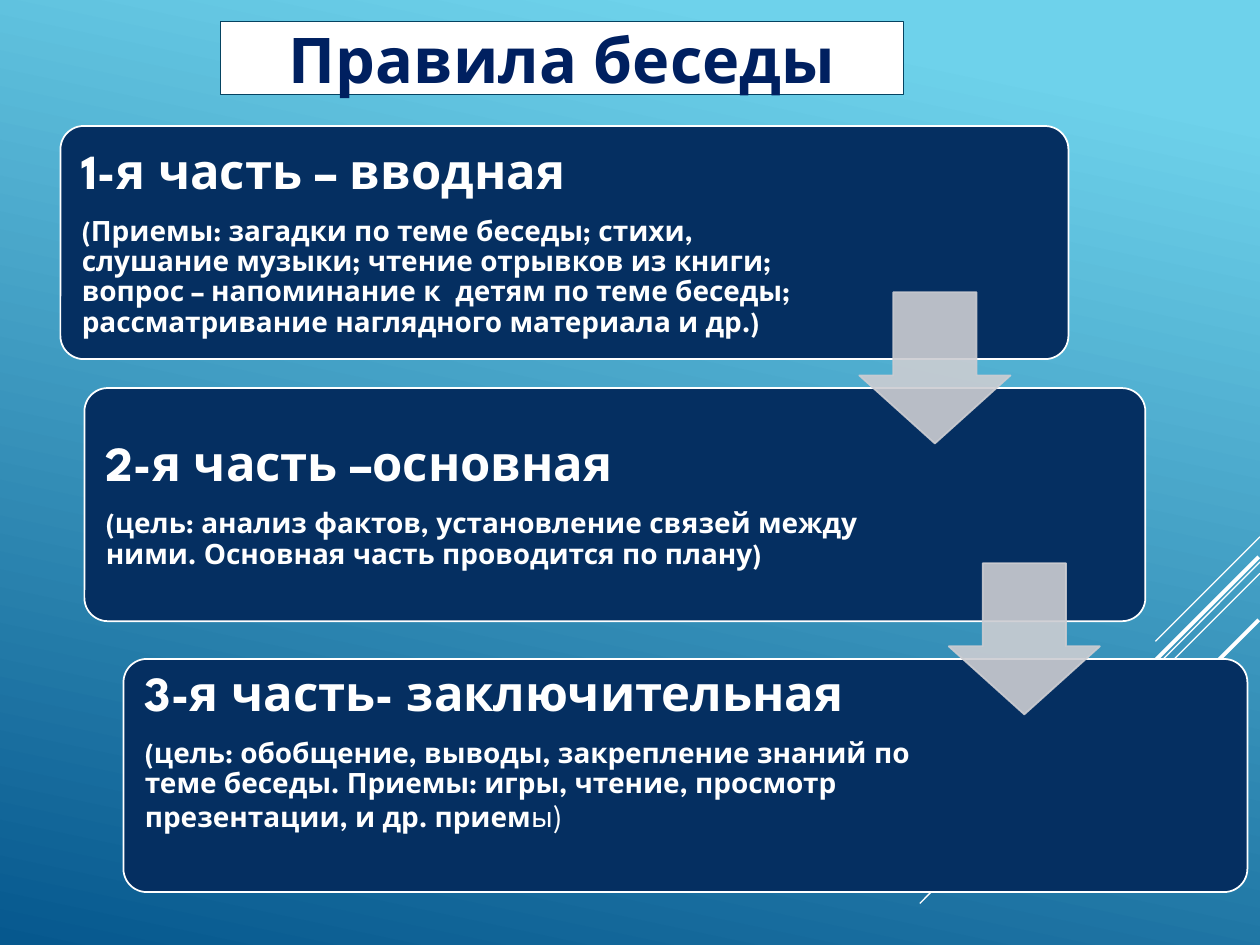
from lxml.etree import SubElement
from pptx import Presentation
from pptx.dml.color import RGBColor
from pptx.enum.shapes import MSO_CONNECTOR, MSO_SHAPE
from pptx.enum.text import MSO_ANCHOR, PP_ALIGN
from pptx.oxml.ns import qn
from pptx.util import Inches, Pt

FONT = "League Spartan"
COLORS = {
    "sky": "6ED2EB", "deep": "06588E", "white": "FFFFFF", "panel": "052F61",
    "arrow": "CCCDD2", "title": "002060", "title_border": "054361",
}
STREAKS = [  # start x, start y, end x, end y, width
    (10, 4.26, 9.17, 5.09, 0.75),
    (10, 4.46, 7.3, 7.17, 0.75),
    (10, 4.55, 8.28, 6.27, 0.75),
    (9.99, 4.42, 8.42, 5.99, 2.25),
    (9.99, 4.92, 8.85, 6.06, 2.25),
]
PANEL_HEIGHT = 1.85
PANELS = [  # left, top, width, text width, bottom inset, heading, detail runs (text, bold, size)
    (0.48, 1, 8, 6.01, 0.12, "1-я часть – вводная",
     [("(Приемы: загадки по теме беседы; стихи, слушание музыки; чтение отрывков из книги; "
       "вопрос – напоминание к  детям по теме беседы; "
       "рассматривание наглядного материала и др.)", True, 16)]),
    (0.67, 3.08, 8.42, 6.3, 0.12, "2-я часть –основная",
     [("(цель: анализ фактов, установление связей между ними. "
       "Основная часть проводится по плану)", True, 16)]),
    (0.98, 5.23, 8.92, 6.68, 0.5, "3-я часть- заключительная",
     [("(цель: обобщение, выводы, закрепление знаний по теме беседы. "
       "Приемы: игры, чтение, просмотр презентации, и др. прием", True, 16),
      ("ы", False, 16), (")", False, 18)]),
]
ARROWS = [(6.82, 2.32), (7.53, 4.47)]
ARROW_SIZE = 1.2


def rgb(name):
    return RGBColor.from_string(COLORS[name])


def add_box(slide, kind, left, top, width, height, fill, line):
    shape = slide.shapes.add_shape(
        kind, Inches(left), Inches(top), Inches(width), Inches(height))
    shape.shadow.inherit = False
    shape.fill.solid()
    shape.fill.fore_color.rgb = rgb(fill)
    shape.line.color.rgb = rgb(line)
    shape.line.width = Pt(1)
    return shape


def style_paragraph(paragraph, size, color):
    font = paragraph.font
    font.name, font.size, font.bold = FONT, Pt(size), True
    font.color.rgb = rgb(color)


def paint_background(slide):
    fill = slide.background.fill
    fill.gradient()
    fill.gradient_angle = 258
    for stop, (position, name) in zip(fill.gradient_stops, [(0.1, "sky"), (1, "deep")]):
        stop.position = position
        stop.color.rgb = rgb(name)


def add_streak(slide, start_x, start_y, end_x, end_y, width):
    connector = slide.shapes.add_connector(
        MSO_CONNECTOR.STRAIGHT, Inches(start_x), Inches(start_y), Inches(end_x), Inches(end_y))
    connector.line.color.rgb = rgb("white")
    connector.line.width = Pt(width)
    SubElement(connector._element.spPr, qn("a:effectLst"))


def add_panel(slide, left, top, width, text_width, bottom_inset, heading, details):
    panel = add_box(slide, MSO_SHAPE.ROUNDED_RECTANGLE, left, top, width, PANEL_HEIGHT,
                    "panel", "white")
    panel.adjustments[0] = 0.1

    margin = 0.05
    text_box = slide.shapes.add_textbox(
        Inches(left + margin), Inches(top + margin),
        Inches(text_width), Inches(PANEL_HEIGHT - 2 * margin))
    frame = text_box.text_frame
    frame.word_wrap = True
    frame.vertical_anchor = MSO_ANCHOR.MIDDLE
    frame.margin_left = frame.margin_top = frame.margin_right = Inches(0.12)
    frame.margin_bottom = Inches(bottom_inset)

    title, detail = frame.paragraphs[0], frame.add_paragraph()
    title.text = heading
    for text, bold, size in details:
        run = detail.add_run()
        run.text = text
        if not bold:
            run.font.bold = False
        if size != 16:
            run.font.size = Pt(size)
    for paragraph, size in ((title, 28), (detail, 16)):
        style_paragraph(paragraph, size, "white")
        paragraph.line_spacing = 0.9
        paragraph.space_after = Pt(round(size * 0.35))


def add_arrow(slide, left, top):
    arrow = add_box(slide, MSO_SHAPE.DOWN_ARROW, left, top, ARROW_SIZE, ARROW_SIZE,
                    "arrow", "arrow")
    arrow.adjustments[0] = 0.55
    arrow.adjustments[1] = 0.45
    for color in arrow._element.spPr.iter(qn("a:srgbClr")):
        SubElement(color, qn("a:alpha"), val="90000")


def add_title(slide, left, top, width, height):
    box = add_box(slide, MSO_SHAPE.RECTANGLE, left, top, width, height, "white", "title_border")
    frame = box.text_frame
    frame.vertical_anchor = MSO_ANCHOR.MIDDLE
    paragraph = frame.paragraphs[0]
    paragraph.text = "Правила беседы"
    paragraph.alignment = PP_ALIGN.CENTER
    style_paragraph(paragraph, 36, "title")


def main():
    presentation = Presentation()
    presentation.slide_width, presentation.slide_height = Inches(10), Inches(7.5)
    slide = presentation.slides.add_slide(presentation.slide_layouts[6])
    paint_background(slide)
    for streak in STREAKS:
        add_streak(slide, *streak)
    for panel in PANELS:
        add_panel(slide, *panel)
    for arrow in ARROWS:
        add_arrow(slide, *arrow)
    add_title(slide, 1.75, 0.17, 5.42, 0.58)
    presentation.save("out.pptx")


if __name__ == "__main__":
    main()
